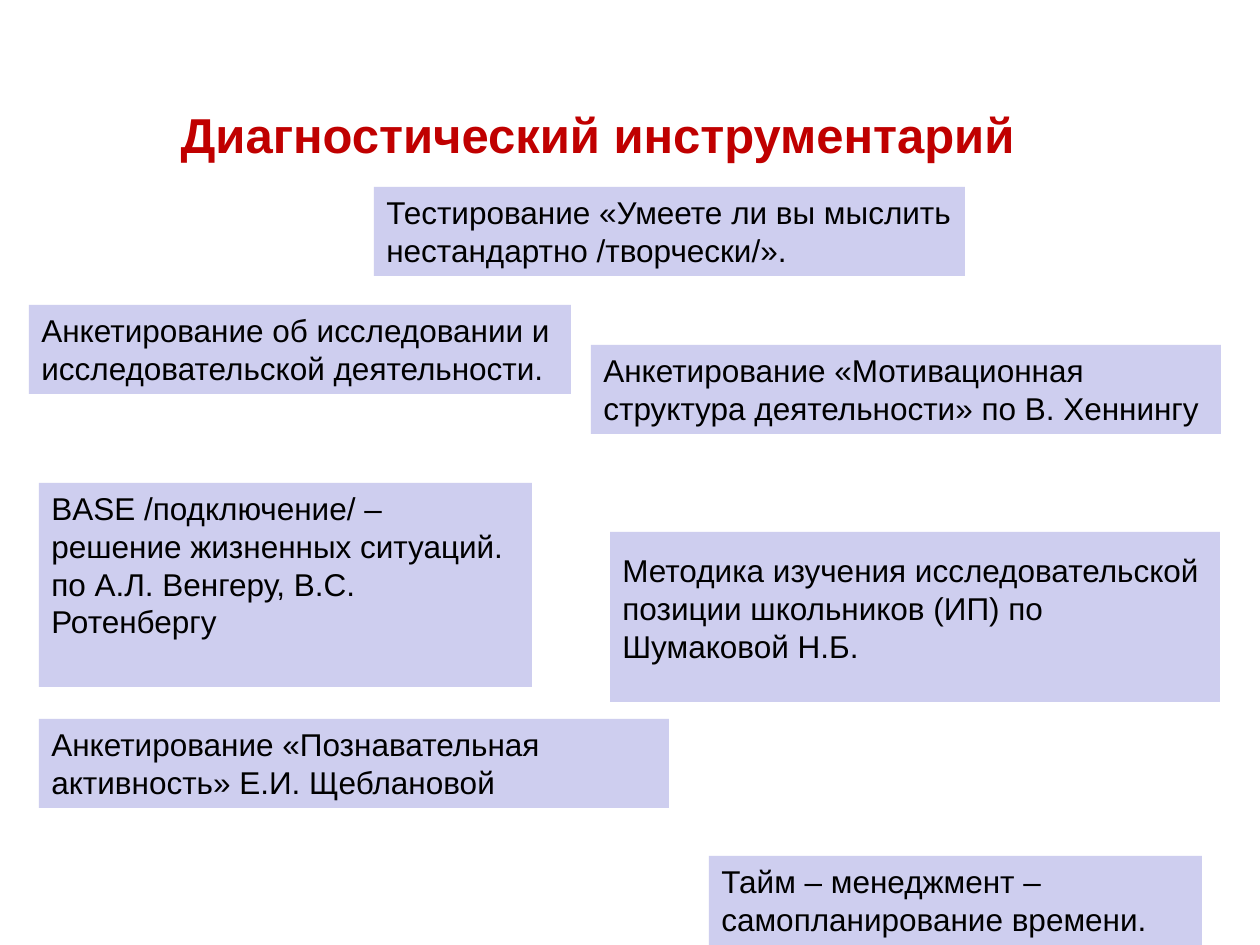
import dataclasses

import pptx
import pptx.dml.color
import pptx.enum.shapes
import pptx.enum.text
import pptx.slide
import pptx.util

EMU_PER_PX = 914400 / 126


@dataclasses.dataclass(frozen=True)
class Theme:
    font: str = "Arial"
    title_size: int = 28
    body_size: int = 18
    title_color: str = "C00000"
    text_color: str = "000000"
    card_color: str = "CECEEF"


@dataclasses.dataclass(frozen=True)
class Card:
    left: int
    top: int
    width: int
    height: int
    text: str
    top_inset: int = 6


THEME = Theme()
TITLE = Card(168, 98, 988, 72, "Диагностический инструментарий")
LINE_PAIR = 89  # height of a card with two lines of text

CARDS = [
    Card(374, 187, 591, LINE_PAIR, "Тестирование «Умеете ли вы мыслить нестандартно /творчески/»."),
    Card(39, 483, 493, 204,
         "BASE /подключение/ – решение жизненных ситуаций. по А.Л. Венгеру, В.С. Ротенбергу"),
    Card(39, 719, 630, LINE_PAIR, "Анкетирование «Познавательная активность» Е.И. Щеблановой"),
    Card(591, 345, 630, LINE_PAIR,
         "Анкетирование «Мотивационная структура деятельности» по В. Хеннингу"),
    Card(709, 856, 493, LINE_PAIR, "Тайм – менеджмент – самопланирование времени."),
    Card(610, 532, 610, 170,
         "Методика изучения исследовательской позиции школьников (ИП) по Шумаковой Н.Б.",
         top_inset=19),
    Card(29, 305, 542, LINE_PAIR,
         "Анкетирование об исследовании и исследовательской деятельности."),
]


def px(value: int) -> pptx.util.Emu:
    return pptx.util.Emu(round(value * EMU_PER_PX))


def rgb(color: str) -> pptx.dml.color.RGBColor:
    return pptx.dml.color.RGBColor.from_string(color)


def write_text(shape, card: Card, size: int, color: str, bold: bool = False) -> None:
    frame = shape.text_frame
    frame.word_wrap = True
    frame.auto_size = pptx.enum.text.MSO_AUTO_SIZE.NONE
    frame.vertical_anchor = pptx.enum.text.MSO_ANCHOR.TOP
    frame.margin_top = px(card.top_inset)
    paragraph = frame.paragraphs[0]
    paragraph.alignment = pptx.enum.text.PP_ALIGN.LEFT
    paragraph.space_before = pptx.util.Pt(0)
    run = paragraph.add_run()
    run.text = card.text
    run.font.name = THEME.font
    run.font.size = pptx.util.Pt(size)
    run.font.bold = bold
    run.font.color.rgb = rgb(color)


def place_title(slide: pptx.slide.Slide, card: Card) -> None:
    title = slide.shapes.title
    title.left, title.top = px(card.left), px(card.top)
    title.width, title.height = px(card.width), px(card.height)
    write_text(title, card, THEME.title_size, THEME.title_color, bold=True)


def draw_card(slide: pptx.slide.Slide, card: Card) -> None:
    shape = slide.shapes.add_shape(
        pptx.enum.shapes.MSO_SHAPE.RECTANGLE,
        px(card.left), px(card.top), px(card.width), px(card.height))
    shape.shadow.inherit = False
    shape.fill.solid()
    shape.fill.fore_color.rgb = rgb(THEME.card_color)
    shape.line.fill.background()
    write_text(shape, card, THEME.body_size, THEME.text_color)


def main() -> None:
    presentation = pptx.Presentation()
    presentation.slide_width, presentation.slide_height = px(1260), px(945)
    slide = presentation.slides.add_slide(presentation.slide_layouts[5])

    # Heading
    place_title(slide, TITLE)

    # Diagnostic methods
    for card in CARDS:
        draw_card(slide, card)

    presentation.save("out.pptx")


if __name__ == "__main__":
    main()
